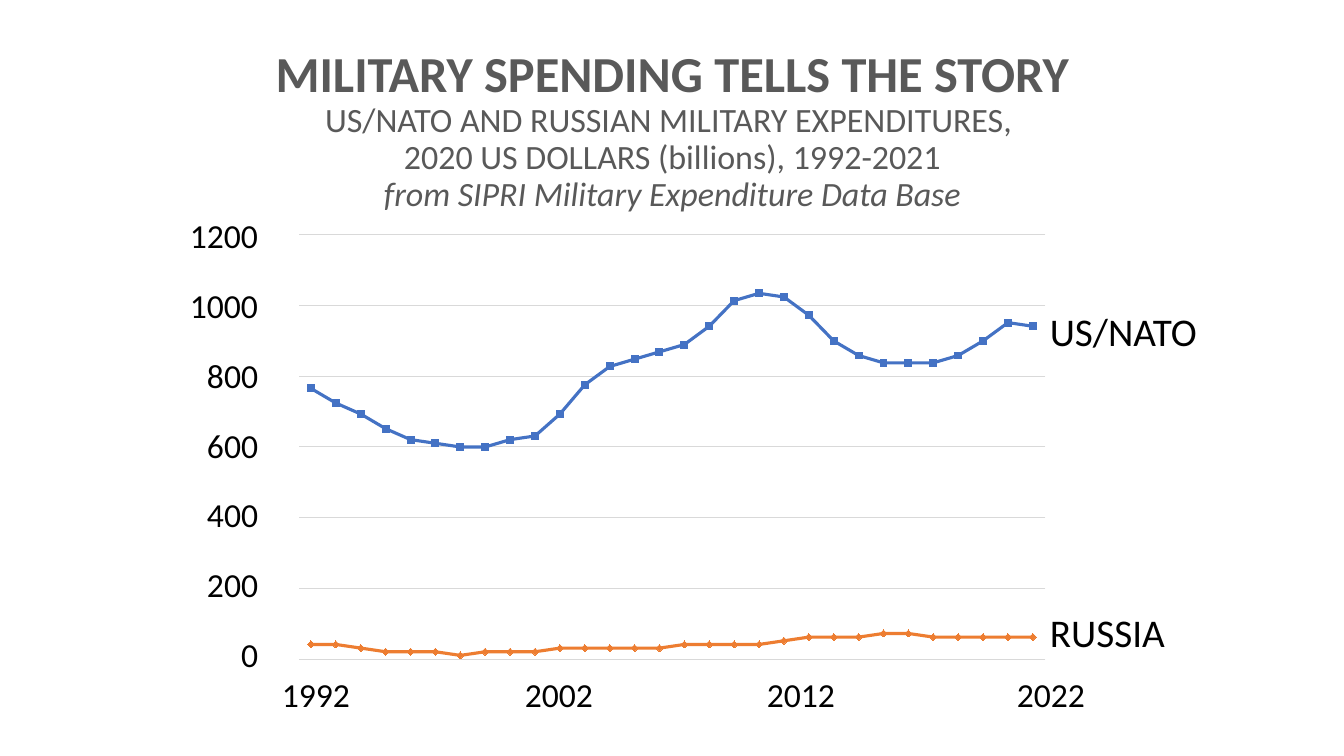
from dataclasses import dataclass

from lxml import etree
from pptx import Presentation
from pptx.chart.data import CategoryChartData
from pptx.dml.color import RGBColor
from pptx.enum.chart import XL_CHART_TYPE
from pptx.enum.text import MSO_ANCHOR, MSO_AUTO_SIZE, PP_ALIGN
from pptx.oxml import parse_xml
from pptx.oxml.ns import qn
from pptx.util import Pt

LINE_CHART = XL_CHART_TYPE.LINE
TOP, MIDDLE = MSO_ANCHOR.TOP, MSO_ANCHOR.MIDDLE
NO_FIT = MSO_AUTO_SIZE.NONE
LEFT, CENTER, RIGHT = PP_ALIGN.LEFT, PP_ALIGN.CENTER, PP_ALIGN.RIGHT
EMU_PER_INCH, PX_PER_INCH = 914400, 100.8


@dataclass(frozen=True)
class Theme:
    font: str = "Calibri"
    heading: str = "595959"
    ink: str = "000000"
    grid: str = "D9D9D9"
    nato: str = "4472C4"
    russia: str = "ED7D31"
    title_size: float = 36
    subtitle_size: float = 24.3
    axis_size: float = 24
    label_size: float = 28
    chart_size: float = 10
    grid_width: float = 0.75
    line_width: float = 2.25


THEME = Theme()

# Content
TITLE_LINES = [
    "MILITARY SPENDING TELLS THE STORY",
    "US/NATO AND RUSSIAN MILITARY EXPENDITURES, ",
    "2020 US DOLLARS (billions), 1992-2021",
    "from SIPRI Military Expenditure Data Base",
]
SPENDING = [
    ("Series 1", THEME.nato,
     [74, 70, 67, 63, 60, 59, 58, 58, 60, 61, 67, 75, 80, 82, 84,
      86, 91, 98, 100, 99, 94, 87, 83, 81, 81, 81, 83, 87, 92, 91]),
    ("Series 2", THEME.russia,
     [4, 4, 3, 2, 2, 2, 1, 2, 2, 2, 3, 3, 3, 3, 3,
      4, 4, 4, 4, 5, 6, 6, 6, 7, 7, 6, 6, 6, 6, 6]),
]
AMOUNTS = range(1200, -1, -200)
YEAR_STOPS = {1992: 39, 2002: 282, 2012: 524, 2022: 774}
AXIS_TOP = 116  # chart units at the 1200 gridline


def px(length):
    return round(length * EMU_PER_INCH / PX_PER_INCH)


def rgb(color):
    return RGBColor.from_string(color)


def style(font, size, color, bold=False, italic=False):
    font.name, font.size = THEME.font, Pt(size)
    font.color.rgb = rgb(color)
    font.bold, font.italic = bold, italic


def add_title(slide, left, top, width, height):
    heading = slide.shapes.title
    heading.left, heading.top = px(left), px(top)
    heading.width, heading.height = px(width), px(height)
    frame = heading.text_frame
    frame.text = "\n".join(TITLE_LINES)
    frame.word_wrap, frame.auto_size = True, NO_FIT
    frame.vertical_anchor, frame.margin_top = TOP, px(9)
    last = len(TITLE_LINES) - 1
    for index, line in enumerate(frame.paragraphs):
        line.alignment, line.line_spacing = CENTER, 0.9
        line.space_before = Pt(0)
        size = THEME.subtitle_size if index else THEME.title_size
        style(line.runs[0].font, size, THEME.heading, index == 0, index == last)


def add_label(slide, text, left, top, width, height, size, align=LEFT, gap=0):
    box = slide.shapes.add_textbox(px(left), px(top), px(width), px(height))
    frame = box.text_frame
    frame.word_wrap = True
    frame.text = text
    for index, line in enumerate(frame.paragraphs):
        line.alignment = align
        line.space_before = Pt(gap if index else 0)
        style(line.runs[0].font, size, THEME.ink)
    return frame


def add_year_axis(slide, left, top, width, height):
    years = "".join(f"\t{year}" for year in YEAR_STOPS)
    frame = add_label(slide, years, left, top, width, height, THEME.axis_size)
    properties = frame.paragraphs[0]._p.get_or_add_pPr()
    stops = etree.SubElement(properties, qn("a:tabLst"))
    for position in YEAR_STOPS.values():
        etree.SubElement(stops, qn("a:tab"), pos=str(px(position)), algn="l")


def fix_plot_area(chart, x, y, w, h):
    # Inner plot area as fractions of the chart frame
    plot_area = chart._chartSpace.chart.plotArea
    for old in plot_area.findall(qn("c:layout")):
        plot_area.remove(old)
    sizes = "".join(f'<c:{key} val="{value}"/>'
                    for key, value in zip("xywh", (x, y, w, h)))
    plot_area.insert(0, parse_xml(
        '<c:layout xmlns:c="http://schemas.openxmlformats.org/drawingml/2006/chart">'
        '<c:manualLayout><c:layoutTarget val="inner"/>'
        '<c:xMode val="edge"/><c:yMode val="edge"/>'
        f'{sizes}</c:manualLayout></c:layout>'))


def add_spending_chart(slide, left, top, width, height):
    data = CategoryChartData(number_format="0")
    data.categories = [str(n + 1) for n in range(len(SPENDING[0][2]))]
    for name, _, values in SPENDING:
        data.add_series(name, values)
    chart = slide.shapes.add_chart(
        LINE_CHART, px(left), px(top), px(width), px(height), data).chart
    chart.has_legend = chart.has_title = False
    style(chart.font, THEME.chart_size, THEME.ink)
    chart.plots[0].vary_by_categories = False

    # Hidden axes with gridlines
    chart.category_axis.visible = False
    amounts = chart.value_axis
    amounts.visible = False
    amounts.minimum_scale, amounts.maximum_scale = 0, AXIS_TOP
    amounts.major_unit = round(AXIS_TOP / (len(AMOUNTS) - 1), 2)
    amounts.has_major_gridlines = True
    grid = amounts.major_gridlines.format.line
    grid.color.rgb, grid.width = rgb(THEME.grid), Pt(THEME.grid_width)

    for series, (_, color, _) in zip(chart.plots[0].series, SPENDING):
        series.smooth = False
        series.marker.style = None
        line = series.format.line
        line.color.rgb, line.width = rgb(color), Pt(THEME.line_width)
    fix_plot_area(chart, 0.02, 0.02, 0.96, 0.96)


def main():
    deck = Presentation()
    deck.slide_width, deck.slide_height = px(1344), px(756)
    slide = deck.slides.add_slide(deck.slide_layouts[5])

    add_title(slide, 93, 40, 1159, 146)
    add_spending_chart(slide, 283, 226, 778, 442)

    # Axis labels
    add_label(slide, "\n".join(map(str, AMOUNTS)), 146, 210, 122, 475,
              THEME.axis_size, RIGHT, gap=21.1)
    add_year_axis(slide, 233, 669, 922, 50)

    # Line labels
    for country, top in (("US/NATO", 302), ("RUSSIA", 603)):
        add_label(slide, country, 1040, top, 193, 57, THEME.label_size)

    deck.save("out.pptx")


if __name__ == "__main__":
    main()
